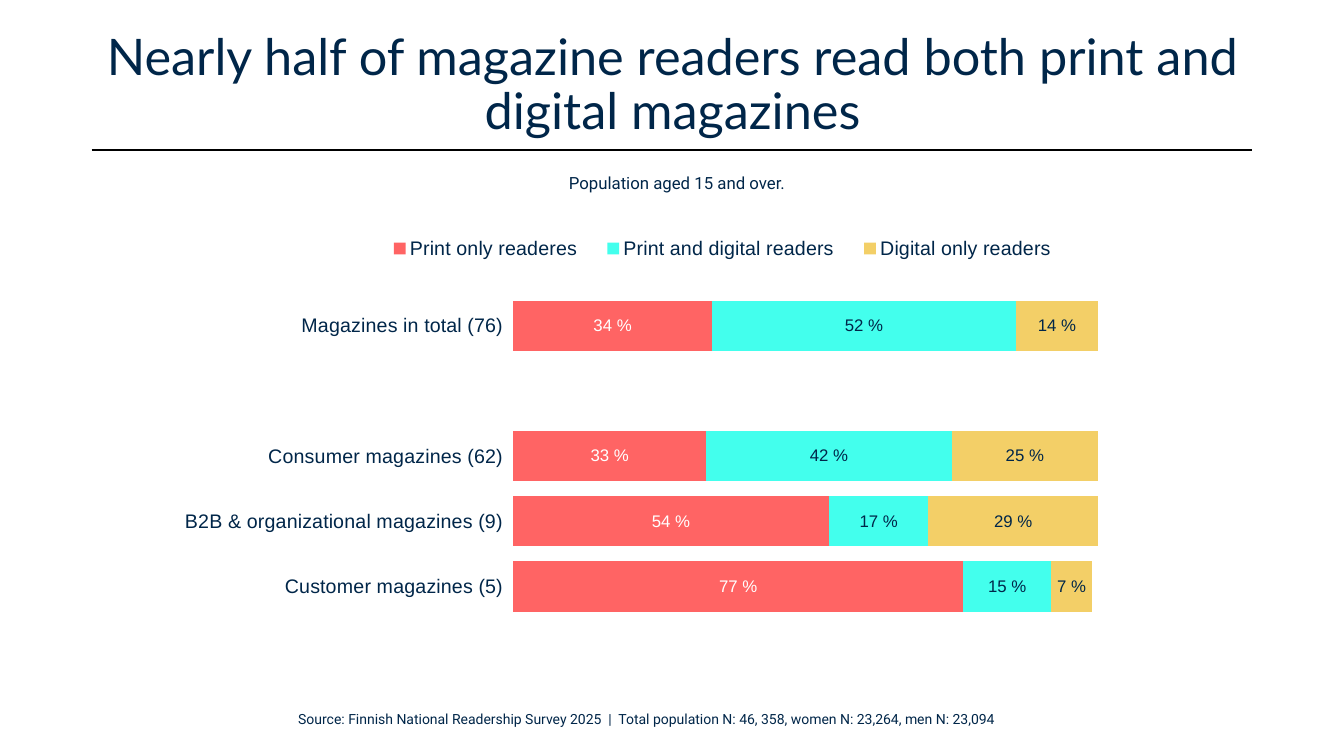
"""Build the slide on print and digital magazine readership."""
from lxml.etree import SubElement
from pptx import Presentation
from pptx.chart.data import CategoryChartData
from pptx.dml.color import RGBColor
from pptx.enum.chart import XL_CHART_TYPE as ChartType, XL_LABEL_POSITION as LabelPos
from pptx.enum.chart import XL_LEGEND_POSITION as LegendPos, XL_TICK_LABEL_POSITION as TickPos
from pptx.enum.chart import XL_TICK_MARK as TickMark
from pptx.enum.shapes import MSO_CONNECTOR as Connector
from pptx.enum.text import MSO_ANCHOR as Anchor, MSO_AUTO_SIZE as AutoSize, PP_ALIGN as Align
from pptx.oxml.ns import qn
from pptx.util import Inches, Pt

HEADLINE = "Nearly half of magazine readers read both print and digital magazines"
POPULATION = "Population aged 15 and over."
SOURCE = ("Source: Finnish National Readership Survey 2025  |  "
          "Total population N: 46, 358, women N: 23,264, men N: 23,094")
MAGAZINES = ["Customer magazines (5)", "B2B & organizational magazines (9)",
             "Consumer magazines (62)", "", "Magazines in total (76)"]
READERS = [
    ("Print only readeres", (77, 54, 33, None, 34), "coral", "white"),
    ("Print and digital readers", (15, 17, 42, None, 52), "aqua", "navy"),
    ("Digital only readers", (7, 29, 25, None, 14), "gold", "navy"),
]
COLORS = {"navy": "002649", "black": "000000", "white": "FFFFFF",
          "coral": "FF6464", "aqua": "43FFED", "gold": "F3CF67"}
PLOT_SHARE = {"x": 0.366, "y": 0.158, "w": 0.598, "h": 0.752}
LEGEND_SHARE = {"x": 0.22, "y": 0, "w": 0.72, "h": 0.11}


def color(name):
    return RGBColor.from_string(COLORS[name])


def style(font, size, face, tint="navy"):
    font.size, font.name = Pt(size), face
    font.color.rgb = color(tint)


def write(shape, text, size, face, box, anchor=Anchor.TOP, spacing=None):
    shape.left, shape.top, shape.width, shape.height = map(Inches, box)
    frame = shape.text_frame
    frame.word_wrap, frame.auto_size = True, AutoSize.NONE
    frame.vertical_anchor = anchor
    line = frame.paragraphs[0]
    line.alignment, line.line_spacing = Align.CENTER, spacing
    run = line.add_run()
    run.text = text
    style(run.font, size, face)


def place(part, share, index, inner=False):
    for old in part.findall(qn("c:layout")):
        part.remove(old)
    layout = part.makeelement(qn("c:layout"))
    manual = SubElement(layout, qn("c:manualLayout"))
    settings = {"layoutTarget": "inner"} if inner else {}
    settings |= {"xMode": "edge", "yMode": "edge", **share}
    for tag, value in settings.items():
        SubElement(manual, qn(f"c:{tag}")).set("val", str(value))
    part.insert(index, layout)


def add_readership(slide):
    data = CategoryChartData()
    data.categories = MAGAZINES
    for name, shares, *_ in READERS:
        data.add_series(name, shares)
    chart = slide.shapes.add_chart(ChartType.BAR_STACKED, Inches(1.54), Inches(2.23),
                                   Inches(9.7), Inches(4.3), data).chart
    chart.has_title = False
    style(chart.font, 12, "Arial")

    chart.has_legend = True
    legend = chart.legend
    legend.position, legend.include_in_layout = LegendPos.TOP, False
    style(legend.font, 14, "Arial")
    place(legend._element, LEGEND_SHARE, 1)
    place(chart.plots[0]._element.getparent(), PLOT_SHARE, 0, inner=True)

    magazines, percent = chart.category_axis, chart.value_axis
    magazines.major_tick_mark = TickMark.NONE
    magazines.tick_label_position = TickPos.LOW
    magazines.format.line.fill.background()
    style(magazines.tick_labels.font, 14, "Arial")
    percent.minimum_scale, percent.maximum_scale = 0, 100.01
    percent.major_unit = 10
    percent.has_major_gridlines = percent.visible = False

    plot = chart.plots[0]
    plot.gap_width, plot.overlap, plot.vary_by_categories = 30, 100, False
    for series, (_, _, fill, ink) in zip(plot.series, READERS):
        series.format.fill.solid()
        series.format.fill.fore_color.rgb = color(fill)
        labels = series.data_labels
        labels.show_value, labels.position = True, LabelPos.CENTER
        labels.number_format, labels.number_format_is_linked = '0" %"', False
        style(labels.font, 12, "Arial", ink)


def main():
    deck = Presentation()
    deck.slide_width, deck.slide_height = Inches(13.33), Inches(7.5)
    slide = deck.slides.add_slide(deck.slide_layouts[5])
    write(slide.shapes.title, HEADLINE, 36, "Lato", (0.92, 0.32, 11.5, 1.07), Anchor.MIDDLE, 0.9)
    rule = slide.shapes.add_connector(Connector.STRAIGHT, Inches(0.91), Inches(1.49),
                                      Inches(12.42), Inches(1.49))
    rule.line.color.rgb, rule.line.width = color("black"), Pt(1)
    SubElement(rule._element.spPr, qn("a:effectLst"))
    for text, size, box in [(POPULATION, 12, (1.25, 1.66, 10.93, 0.3)),
                            (SOURCE, 10, (2.45, 7, 7.92, 0.27))]:
        write(slide.shapes.add_textbox(0, 0, 0, 0), text, size, "Roboto", box)
    add_readership(slide)
    deck.save("out.pptx")


if __name__ == "__main__":
    main()
